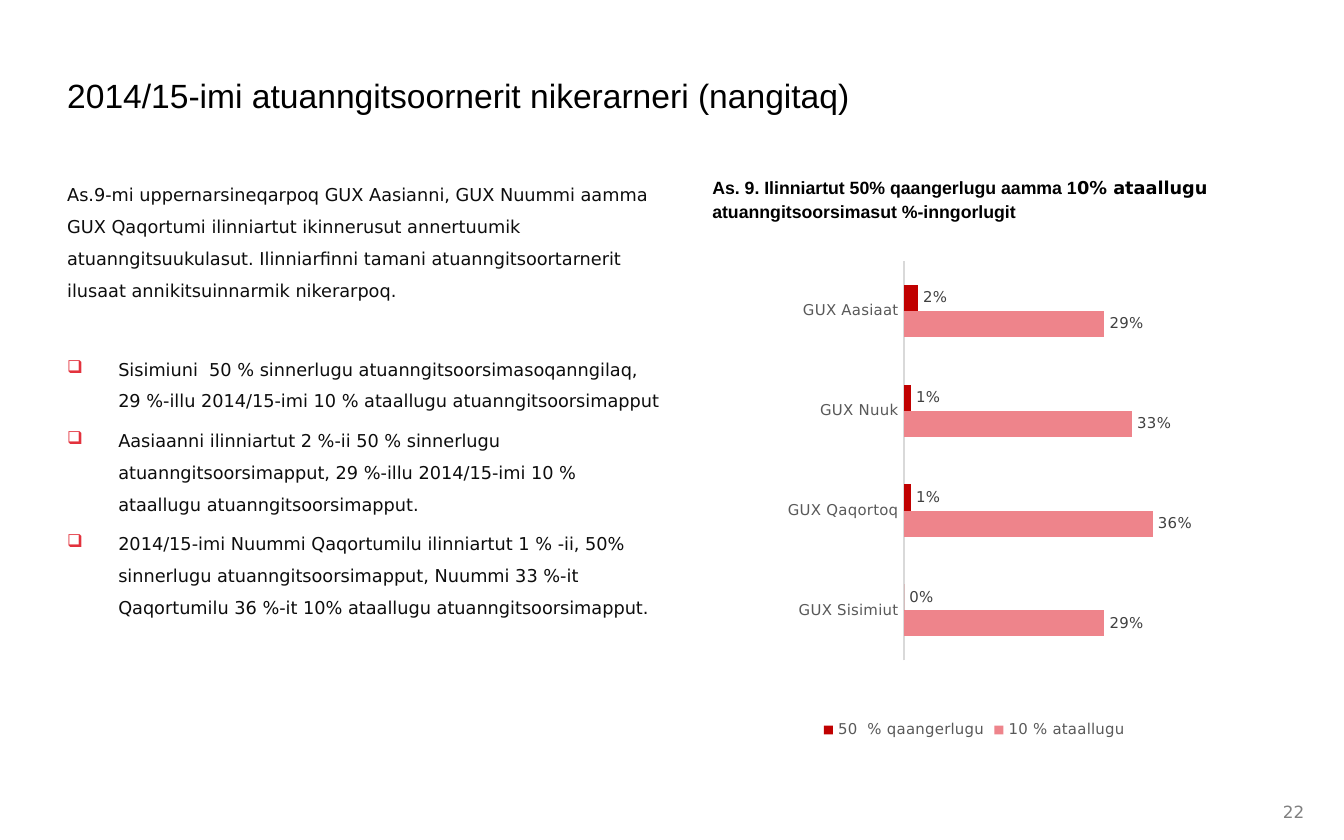
from lxml import etree
from pptx import Presentation
from pptx import util as u
from pptx.chart import data
from pptx.dml import color
from pptx.enum import chart as ch, text
from pptx.oxml import ns

SANS = "DejaVu Sans"
ARIAL = "Arial"
BODY = (
    "As.9-mi uppernarsineqarpoq GUX Aasianni, GUX Nuummi aamma GUX Qaqortumi "
    "ilinniartut ikinnerusut annertuumik atuanngitsuukulasut. Ilinniarfinni tamani "
    "atuanngitsoortarnerit ilusaat annikitsuinnarmik nikerarpoq."
)
ITEMS = [
    "Sisimiuni  50 % sinnerlugu atuanngitsoorsimasoqanngilaq, 29 %-illu 2014/15-imi "
    "10 % ataallugu atuanngitsoorsimapput",
    "Aasiaanni ilinniartut 2 %-ii 50 % sinnerlugu atuanngitsoorsimapput, 29 %-illu "
    "2014/15-imi 10 % ataallugu atuanngitsoorsimapput.",
    "2014/15-imi Nuummi Qaqortumilu ilinniartut 1 % -ii, 50% sinnerlugu "
    "atuanngitsoorsimapput, Nuummi 33 %-it Qaqortumilu 36 %-it 10% ataallugu "
    "atuanngitsoorsimapput.",
]
HEAD = [
    ("As. 9. Ilinniartut 50% qaangerlugu aamma 1", ARIAL),
    ("0% ataallugu ", SANS),
    ("atuanngitsoorsimasut %-inngorlugit", ARIAL),
]
CATS = ["GUX Sisimiut", "GUX Qaqortoq", "GUX Nuuk", "GUX Aasiaat"]
BARS = [
    ("10 % ataallugu", [0.29, 0.36, 0.33, 0.29], "EE848B"),
    ("50  % qaangerlugu", [0, 0.01, 0.01, 0.02], "C00000"),
]


def rgb(code):
    return color.RGBColor.from_string(code)


def put(obj, **vals):
    for key, val in vals.items():
        setattr(obj, key, val)


def style(font, size, hue, name=SANS, bold=False):
    put(font, size=u.Pt(size), name=name, bold=bold)
    font.color.rgb = rgb(hue)


def frame(slide, box, anchor=text.MSO_ANCHOR.TOP):
    area = slide.shapes.add_textbox(*map(u.Inches, box)).text_frame
    put(area, word_wrap=True, vertical_anchor=anchor, margin_left=0,
        margin_right=0, margin_top=0, margin_bottom=0)
    return area


def write(para, runs, size, hue, bold=False, **form):
    put(para, **form)
    for words, name in runs:
        run = para.add_run()
        run.text = words
        style(run.font, size, hue, name, bold)


def bullet(para, mark, hue):
    props = para._p.get_or_add_pPr()
    put_on = {"marL": u.Inches(0.38), "indent": -u.Inches(0.38)}
    for key, val in put_on.items():
        props.set(key, str(val))
    tint = etree.SubElement(props, ns.qn("a:buClr"))
    etree.SubElement(tint, ns.qn("a:srgbClr"), val=hue)
    etree.SubElement(props, ns.qn("a:buChar"), char=mark)


def title(slide, box):
    area = frame(slide, box)
    words = "2014/15-imi atuanngitsoornerit nikerarneri (nangitaq)"
    write(area.paragraphs[0], [(words, ARIAL)], 18, "000000")


def body(slide, box):
    area = frame(slide, box)
    form = {"line_spacing": 1.5, "space_after": u.Pt(2)}
    write(area.paragraphs[0], [(BODY, SANS)], 9.5, "0D0D0D", **form)
    for i, words in enumerate(ITEMS):
        para = area.add_paragraph()
        bullet(para, "❑", "E3323D")
        gap = u.Pt(2 if i else 23)
        write(para, [(words, SANS)], 9.5, "0D0D0D", space_before=gap, **form)


def heading(slide, box):
    area = frame(slide, box)
    write(area.paragraphs[0], HEAD, 9.5, "000000", True, line_spacing=1.14)


def place(chart, x, y, w, h):
    plot = chart._chartSpace.chart.plotArea
    outer = etree.Element(ns.qn("c:layout"))
    plot.insert(0, outer)
    inner = etree.SubElement(outer, ns.qn("c:manualLayout"))
    vals = {"layoutTarget": "inner", "xMode": "edge", "yMode": "edge",
            "x": x, "y": y, "w": w, "h": h}
    for key, val in vals.items():
        etree.SubElement(inner, ns.qn("c:" + key), val=str(val))


def graph(slide, box):
    info = data.CategoryChartData(number_format="0%")
    info.categories = CATS
    for name, vals, hue in BARS:
        info.add_series(name, vals)
    kind = ch.XL_CHART_TYPE.BAR_CLUSTERED
    chart = slide.shapes.add_chart(kind, *map(u.Inches, box), info).chart
    put(chart, has_title=False, has_legend=True)
    style(chart.font, 8, "000000")
    put(chart.legend, position=ch.XL_LEGEND_POSITION.BOTTOM, include_in_layout=False)
    style(chart.legend.font, 8, "595959")
    none = ch.XL_TICK_MARK.NONE
    cat = chart.category_axis
    put(cat, major_tick_mark=none, minor_tick_mark=none, has_major_gridlines=False)
    style(cat.tick_labels.font, 8, "595959")
    cat.format.line.color.rgb = rgb("D9D9D9")
    cat.format.line.width = u.Pt(0.75)
    put(chart.value_axis, visible=False, minimum_scale=0, maximum_scale=0.5,
        has_major_gridlines=False)
    plot = chart.plots[0]
    put(plot, gap_width=182, vary_by_categories=False)
    for bar, (name, vals, hue) in zip(plot.series, BARS):
        bar.format.fill.solid()
        bar.format.fill.fore_color.rgb = rgb(hue)
        tags = bar.data_labels
        put(tags, show_value=True, number_format="0%", number_format_is_linked=False,
            position=ch.XL_LABEL_POSITION.OUTSIDE_END)
        style(tags.font, 8, "404040")
    place(chart, 0.39, 0.08, 0.54, 0.76)


def number(slide, box):
    area = frame(slide, box, text.MSO_ANCHOR.MIDDLE)
    write(area.paragraphs[0], [("22", SANS)], 9, "808080",
          line_spacing=1.2, alignment=text.PP_ALIGN.CENTER)


def main():
    deck = Presentation()
    put(deck, slide_width=u.Inches(10), slide_height=u.Inches(6.25))
    slide = deck.slides.add_slide(deck.slide_layouts[6])
    number(slide, (9.5, 5.98, 0.25, 0.09))
    title(slide, (0.5, 0.56, 9, 0.59))
    body(slide, (0.5, 1.29, 4.41, 4.59))
    heading(slide, (5.3, 1.29, 4.44, 0.36))
    graph(slide, (4.87, 1.63, 4.76, 3.91))
    deck.save("out.pptx")


if __name__ == "__main__":
    main()
